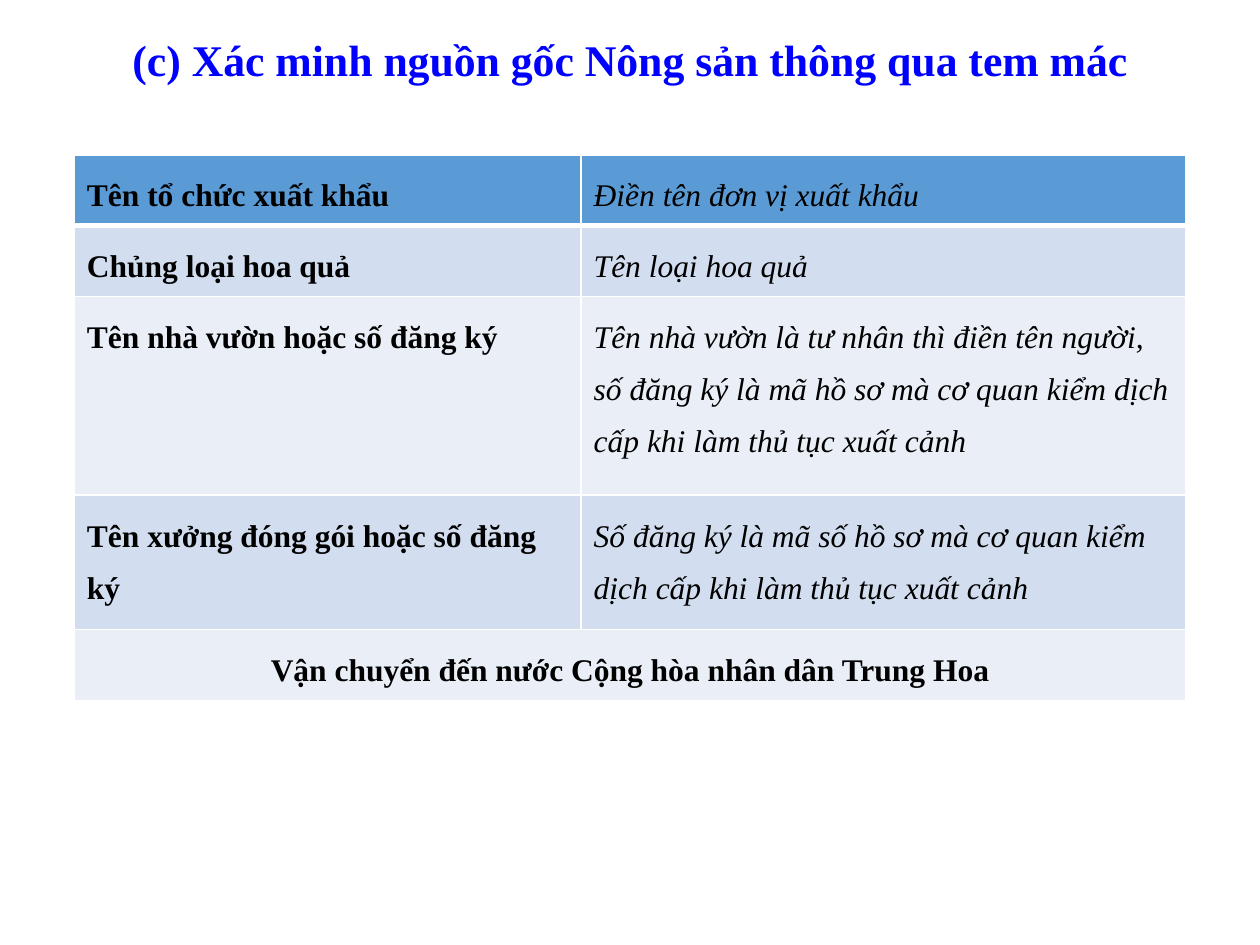
"""Build the slide on verifying the origin of farm produce through its label."""
from lxml.etree import SubElement
from pptx import Presentation
from pptx.dml.color import RGBColor
from pptx.enum.text import MSO_ANCHOR, PP_ALIGN
from pptx.oxml.ns import qn
from pptx.util import Pt

TITLE = "(c) Xác minh nguồn gốc Nông sản thông qua tem mác"
ROWS = [
    ("Tên tổ chức xuất khẩu", "Điền tên đơn vị xuất khẩu"),
    ("Chủng loại hoa quả", "Tên loại hoa quả"),
    ("Tên nhà vườn hoặc số đăng ký",
     "Tên nhà vườn là tư nhân thì điền tên người, số đăng ký là mã hồ sơ "
     "mà cơ quan kiểm dịch cấp khi làm thủ tục xuất cảnh"),
    ("Tên xưởng đóng gói hoặc số đăng ký",
     "Số đăng ký là mã số hồ sơ mà cơ quan kiểm dịch cấp khi làm thủ tục xuất cảnh"),
    ("Vận chuyển đến nước Cộng hòa nhân dân Trung Hoa",),
]
COL_WIDTHS = [289.6, 345.6]
ROW_HEIGHTS = [40.4, 40.4, 113.6, 76.8, 40.4]
HEADER_FILL = "5B9BD5"
BAND_FILLS = ["EAEFF7", "D2DEEF"]


def color(value):
    return RGBColor.from_string(value)


def write(tf, text, size=18, fill="000000", bold=False, italic=False,
          align=PP_ALIGN.LEFT, spacing=1.5):
    p = tf.paragraphs[0]
    p.alignment = align
    p.line_spacing = spacing
    r = p.add_run()
    r.text = text
    r.font.name = "Times New Roman"
    r.font.size = Pt(size)
    r.font.bold = bold
    r.font.italic = italic
    r.font.color.rgb = color(fill)


def set_borders(cell, **widths):
    tc_pr = cell._tc.get_or_add_tcPr()
    for side in "LRTB":
        ln = SubElement(tc_pr, qn(f"a:ln{side}"), w=str(Pt(widths.get(side, 1))))
        SubElement(SubElement(ln, qn("a:solidFill")), qn("a:srgbClr"), val="FFFFFF")


def add_title(s):
    sp = s.shapes.add_textbox(0, 0, Pt(720), Pt(71.3))
    tf = sp.text_frame
    tf.word_wrap = True
    tf.vertical_anchor = MSO_ANCHOR.MIDDLE
    write(tf, TITLE, size=25, fill="0000FF", bold=True, align=PP_ALIGN.CENTER, spacing=0.9)


def add_label_table(s):
    table = s.shapes.add_table(len(ROWS), len(COL_WIDTHS), Pt(42.5), Pt(88.6),
                               Pt(sum(COL_WIDTHS)), Pt(sum(ROW_HEIGHTS))).table
    for column, width in zip(table.columns, COL_WIDTHS):
        column.width = Pt(width)
    for i, (texts, height) in enumerate(zip(ROWS, ROW_HEIGHTS)):
        table.rows[i].height = Pt(height)
        for j in range(len(COL_WIDTHS)):
            cell = table.cell(i, j)
            set_borders(cell, T=3 if i == 1 else 1, B=3 if i == 0 else 1)
            cell.fill.solid()
            cell.fill.fore_color.rgb = color(BAND_FILLS[i % 2] if i else HEADER_FILL)
        merged = len(texts) == 1
        if merged:
            table.cell(i, 0).merge(table.cell(i, len(COL_WIDTHS) - 1))
        for j, text in enumerate(texts):
            write(table.cell(i, j).text_frame, text, bold=j == 0, italic=j == 1,
                  align=PP_ALIGN.CENTER if merged else PP_ALIGN.LEFT)


def main():
    prs = Presentation()
    prs.slide_width, prs.slide_height = Pt(720), Pt(540)
    s = prs.slides.add_slide(prs.slide_layouts[6])
    add_title(s)
    add_label_table(s)
    prs.save("out.pptx")


if __name__ == "__main__":
    main()
